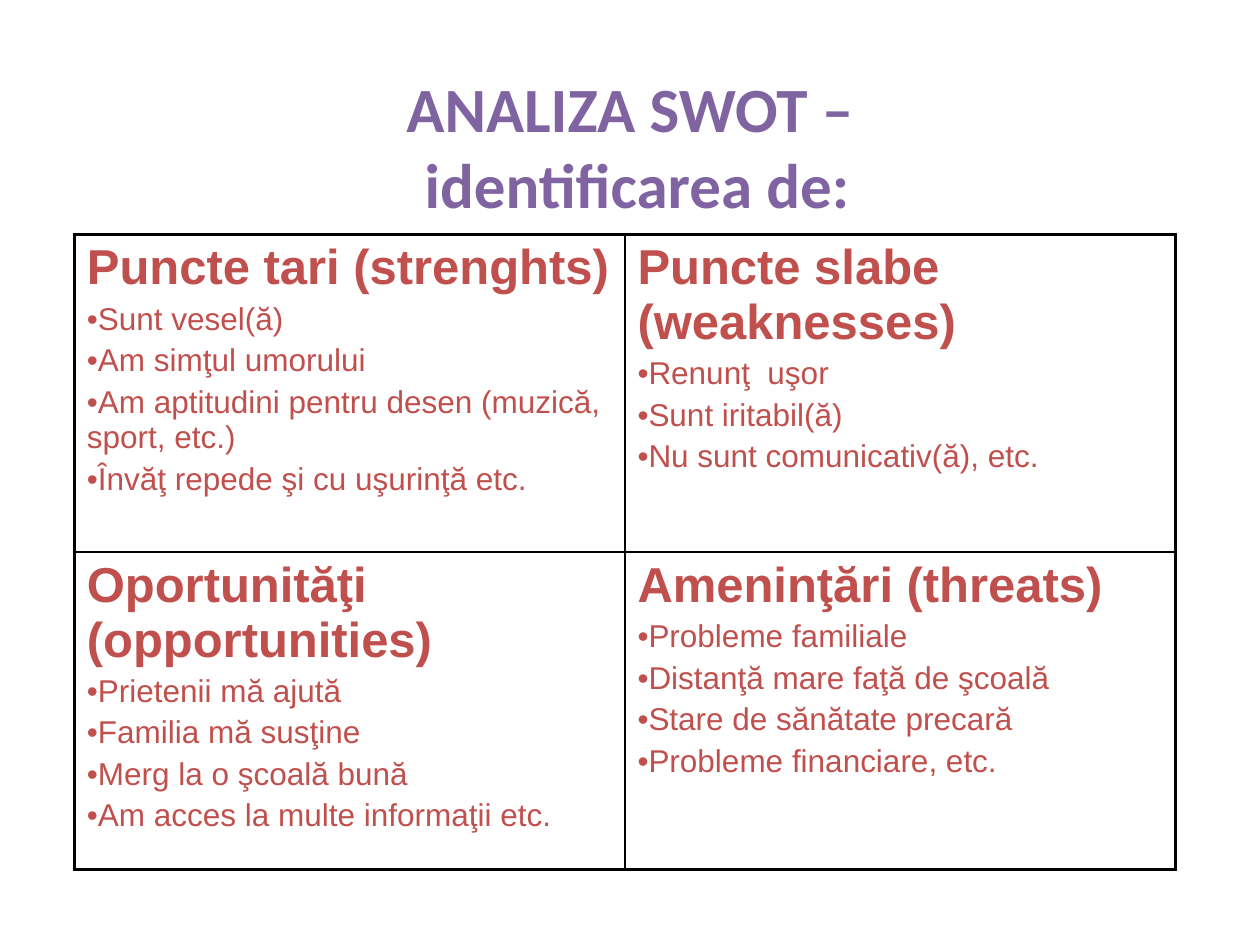
"""Build a SWOT analysis slide with a two by two table."""
from copy import deepcopy
from lxml import etree
from pptx import Presentation, util as u
from pptx.dml.color import RGBColor
from pptx.enum import text as t
from pptx.oxml.ns import qn

TITLE = "ANALIZA SWOT –\v identificarea de:"
SWOT = [
    [
        ("Puncte tari (strenghts)", [
            "Sunt vesel(ă)",
            "Am simţul umorului",
            "Am aptitudini pentru desen (muzică, sport, etc.)",
            "Învăţ repede şi cu uşurinţă etc.",
        ]),
        ("Puncte slabe (weaknesses)", [
            "Renunţ  uşor",
            "Sunt iritabil(ă)",
            "Nu sunt comunicativ(ă), etc.",
        ]),
    ],
    [
        ("Oportunităţi (opportunities)", [
            "Prietenii mă ajută",
            "Familia mă susţine",
            "Merg la o şcoală bună",
            "Am acces la multe informaţii etc.",
        ]),
        ("Ameninţări (threats)", [
            "Probleme familiale",
            "Distanţă mare faţă de şcoală",
            "Stare de sănătate precară",
            "Probleme financiare, etc.",
        ]),
    ],
]
HEX = {"title": "8064A2", "text": "C0504D", "line": "000000"}
WIDE, HIGH = 10, 7.5
COL, ROW = 4.37, 2.52
OUTER, INNER = 2.25, 1


def write(para, words, size=18, font="Arial", color="text", bold=False,
          align=t.PP_ALIGN.LEFT, gap=0.2, bullet=None):
    """Fill a paragraph with formatted text."""
    para.text = words
    para.alignment = align
    para.space_before = u.Pt(size * gap)
    for run in para.runs:
        run.font.size = u.Pt(size)
        run.font.name = font
        run.font.bold = bold
        run.font.color.rgb = RGBColor.from_string(HEX[color])
    for br in para._p.findall(qn("a:br")):
        br.append(deepcopy(para.runs[0]._r.rPr))
    if bullet:
        props = para._p.get_or_add_pPr()
        etree.SubElement(props, qn("a:buFont"), typeface=font)
        etree.SubElement(props, qn("a:buChar"), char=bullet)


def border(cell, row, col):
    """Draw thick lines on the table's edge and thin ones inside."""
    props = cell._tc.get_or_add_tcPr()
    edges = {"L": col == 0, "R": col == 1, "T": row == 0, "B": row == 1}
    for side, edge in edges.items():
        width = u.Pt(OUTER if edge else INNER)
        line = etree.SubElement(props, qn(f"a:ln{side}"), w=str(int(width)))
        fill = etree.SubElement(line, qn("a:solidFill"))
        etree.SubElement(fill, qn("a:srgbClr"), val=HEX["line"])


def main():
    """Build and save the slide."""
    deck = Presentation()
    deck.slide_width, deck.slide_height = u.Inches(WIDE), u.Inches(HIGH)
    slide = deck.slides.add_slide(deck.slide_layouts[5])

    title = slide.shapes.title
    title.left, title.top = u.Inches(WIDE * 0.05), u.Inches(0.53)
    title.width, title.height = u.Inches(WIDE * 0.9), u.Inches(1.25)
    frame = title.text_frame
    frame.auto_size = t.MSO_AUTO_SIZE.NONE
    frame.vertical_anchor = t.MSO_ANCHOR.MIDDLE
    write(frame.paragraphs[0], TITLE, size=36, font="Calibri", color="title",
          bold=True, align=t.PP_ALIGN.CENTER, gap=0)

    grid = slide.shapes.add_table(
        2, 2, u.Inches(0.59), u.Inches(1.86),
        u.Inches(2 * COL), u.Inches(2 * ROW)).table
    grid.first_row = grid.horz_banding = False
    for row, parts in enumerate(SWOT):
        for col, (head, points) in enumerate(parts):
            cell = grid.cell(row, col)
            border(cell, row, col)
            cell.fill.background()
            body = cell.text_frame
            write(body.paragraphs[0], head, size=28, bold=True)
            for point in points:
                write(body.add_paragraph(), point, bullet="•")

    deck.save("out.pptx")


if __name__ == "__main__":
    main()
